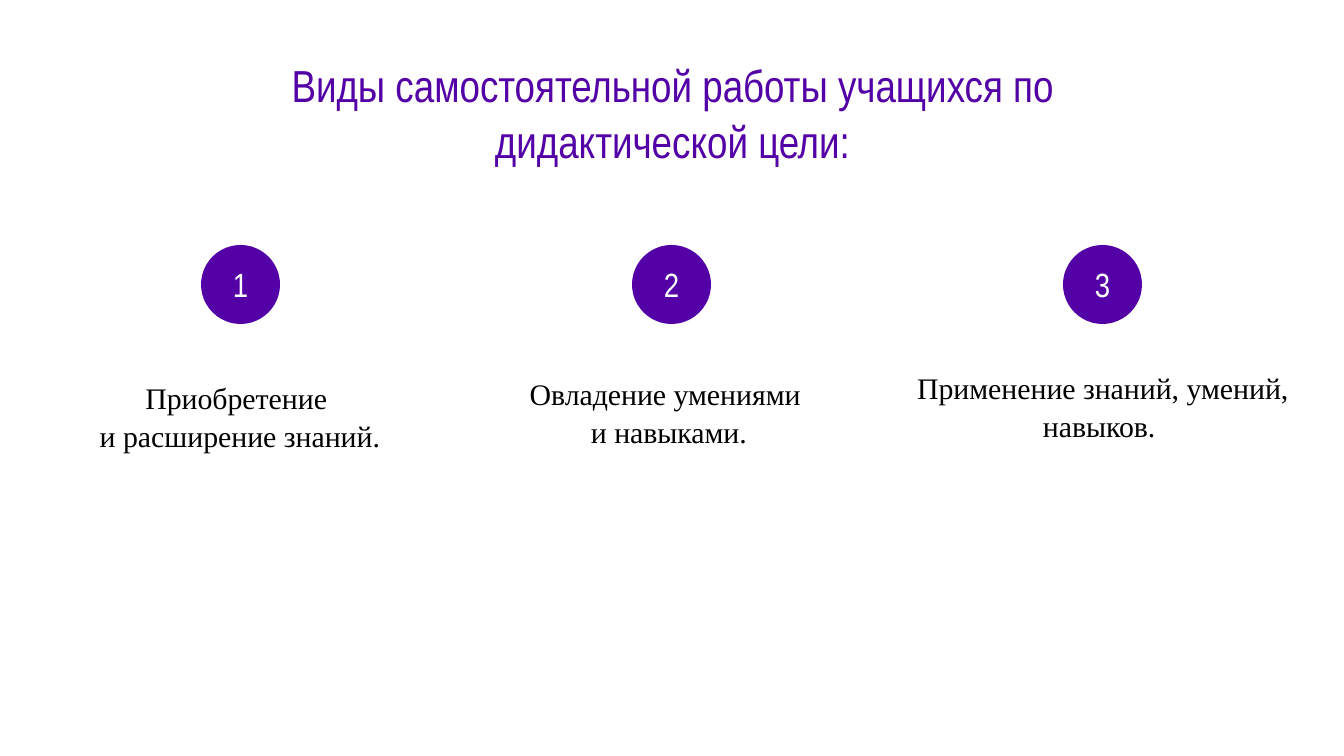
from dataclasses import dataclass

from pptx import Presentation
from pptx.dml.color import RGBColor
from pptx.enum.shapes import MSO_SHAPE as Shape
from pptx.enum.text import MSO_ANCHOR as Anchor, PP_ALIGN as Align
from pptx.util import Emu, Pt

EMU_PER_PX = 914400 / 134.4


@dataclass(frozen=True)
class Theme:
    accent: str = "5300A6"
    ink: str = "000000"
    paper: str = "FFFFFF"
    heading_font: str = "Arial Narrow"
    body_font: str = "Times New Roman"
    title_size: int = 24
    number_size: int = 18
    body_size: int = 16


THEME = Theme()


def px(n):
    return Emu(round(n * EMU_PER_PX))


def rgb(color):
    return RGBColor.from_string(color)


def write(tf, text, *, font, size, color, anchor=Anchor.TOP, spacing=1.0):
    tf.word_wrap = True
    tf.vertical_anchor = anchor
    tf.margin_left = tf.margin_right = tf.margin_top = tf.margin_bottom = 0
    p = tf.paragraphs[0]
    p.text = text
    p.alignment = Align.CENTER
    p.line_spacing = spacing
    for r in p.runs:
        r.font.name = font
        r.font.size = Pt(size)
        r.font.color.rgb = rgb(color)


def add_text(s, box, text, **fmt):
    sp = s.shapes.add_textbox(*map(px, box))
    write(sp.text_frame, text, spacing=1.05, **fmt)


def add_badge(s, left, top, size, number):
    sp = s.shapes.add_shape(Shape.OVAL, *map(px, (left, top, size, size)))
    sp.shadow.inherit = False
    sp.fill.solid()
    sp.fill.fore_color.rgb = rgb(THEME.accent)
    sp.line.fill.background()
    write(sp.text_frame, str(number), font=THEME.heading_font,
          size=THEME.number_size, color=THEME.paper, anchor=Anchor.MIDDLE)


def main():
    prs = Presentation()
    prs.slide_width, prs.slide_height = px(1344), px(756)
    s = prs.slides.add_slide(prs.slide_layouts[6])

    add_text(s, (241, 55, 863, 109),
             "Виды самостоятельной работы учащихся по дидактической цели:",
             font=THEME.heading_font, size=THEME.title_size, color=THEME.accent)

    kinds = [
        (52, 378, "Приобретение \nи расширение знаний."),
        (481, 374, "Овладение умениями \nи навыками."),
        (915, 368, "Применение знаний, умений, навыков. "),
    ]
    for i, (left, top, text) in enumerate(kinds):
        add_badge(s, 201 + 431 * i, 245, 79, i + 1)
        add_text(s, (left, top, 376, 73), text, font=THEME.body_font,
                 size=THEME.body_size, color=THEME.ink)

    prs.save("out.pptx")


if __name__ == "__main__":
    main()
